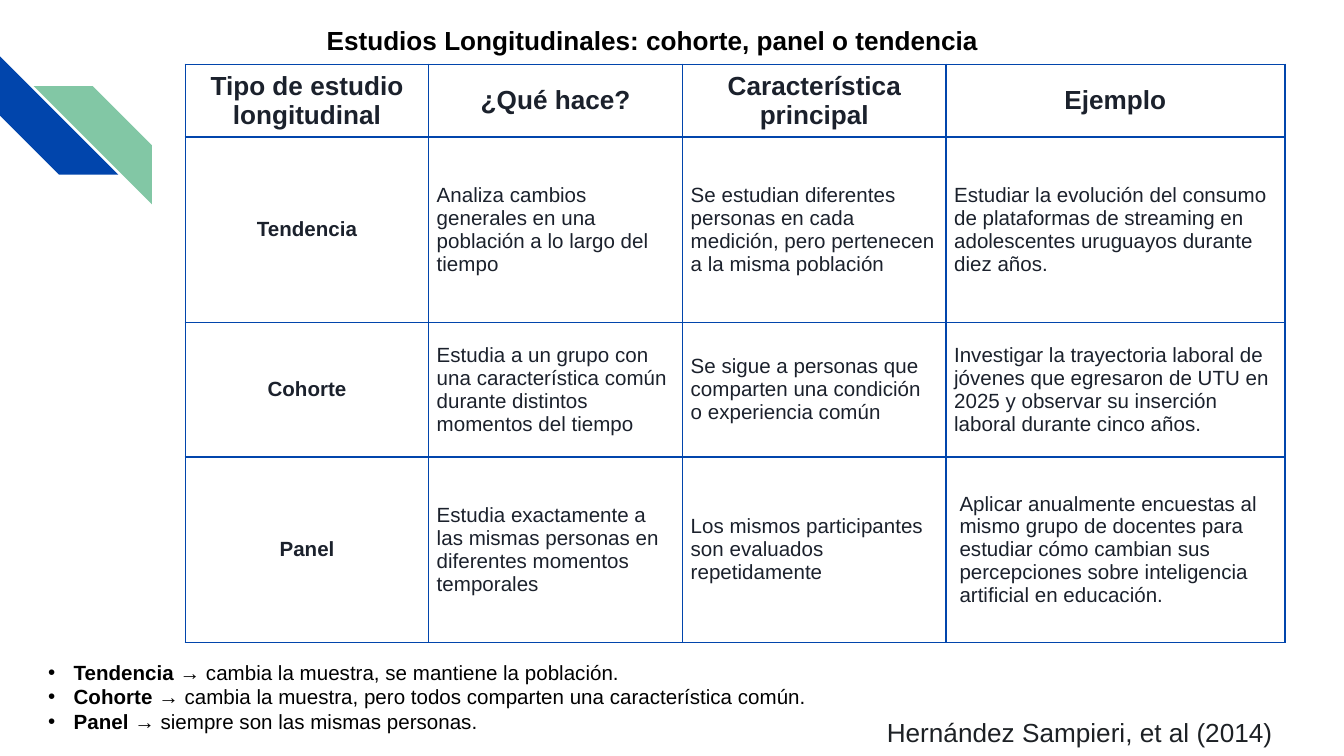
from lxml.etree import SubElement
from pptx import Presentation
from pptx.dml.color import RGBColor
from pptx.enum.shapes import MSO_SHAPE
from pptx.enum.text import MSO_ANCHOR, PP_ALIGN
from pptx.oxml.ns import qn
from pptx.util import Inches, Pt

BLUE, GREEN = "0145AC", "82C7A5"
BLACK, INK, GREY = "000000", "1B212C", "1D2125"

WIDTHS = [1.81, 1.89, 1.96, 2.52]
HEIGHTS = [0.54, 1.38, 1, 1.38]
ROWS = [
    ["Tipo de estudio longitudinal", "¿Qué hace?", "Característica principal", "Ejemplo"],
    ["Tendencia",
     "Analiza cambios generales en una población a lo largo del tiempo",
     "Se estudian diferentes personas en cada medición, pero pertenecen a la misma población",
     "Estudiar la evolución del consumo de plataformas de streaming en adolescentes "
     "uruguayos durante diez años."],
    ["Cohorte",
     "Estudia a un grupo con una característica común durante distintos momentos del tiempo",
     "Se sigue a personas que comparten una condición o experiencia común",
     "Investigar la trayectoria laboral de jóvenes que egresaron de UTU en 2025 y observar "
     "su inserción laboral durante cinco años."],
    ["Panel",
     "Estudia exactamente a las mismas personas en diferentes momentos temporales",
     "Los mismos participantes son evaluados repetidamente",
     "Aplicar anualmente encuestas al mismo grupo de docentes para estudiar cómo cambian "
     "sus percepciones sobre inteligencia artificial en educación."],
]
NOTES = [
    ("Tendencia", " → cambia la muestra, se mantiene la población."),
    ("Cohorte", " → cambia la muestra, pero todos comparten una característica común."),
    ("Panel", " → siempre son las mismas personas."),
]


def color(code):
    return RGBColor.from_string(code)


class Deck:
    """Holds the text style and the current slide."""

    def __init__(self, face="Arial"):
        self.face = face
        self.file = Presentation()
        self.file.slide_width = Inches(10)
        self.file.slide_height = Inches(10 * 9 / 16)
        self.slide = self.file.slides.add_slide(self.file.slide_layouts[5])

    def style(self, para, size, code, bold=None, align=PP_ALIGN.LEFT):
        para.alignment = align
        font = para.font
        font.name, font.size, font.bold = self.face, Pt(size), bold
        font.color.rgb = color(code)

    def title(self, text, *box):
        shape = self.slide.shapes.title
        shape.left, shape.top, shape.width, shape.height = map(Inches, box)
        frame = shape.text_frame
        frame.text = text
        frame.vertical_anchor = MSO_ANCHOR.TOP
        self.style(frame.paragraphs[0], 14, BLACK, True)

    def stripe(self, left, top, code, turn=0, flip=False):
        size = Inches(0.88)
        shape = self.slide.shapes.add_shape(
            MSO_SHAPE.DIAGONAL_STRIPE, Inches(left), Inches(top), size, size)
        shape.adjustments[0] = 0.5
        shape.rotation = turn
        shape.shadow.inherit = False
        shape.fill.solid()
        shape.fill.fore_color.rgb = color(code)
        shape.line.fill.background()
        if flip:
            shape.element.spPr.get_or_add_xfrm().set("flipH", "1")

    def text(self, *box):
        frame = self.slide.shapes.add_textbox(*map(Inches, box)).text_frame
        frame.word_wrap = True
        return frame

    def label(self, text, *box):
        para = self.text(*box).paragraphs[0]
        para.text = text
        self.style(para, 14, GREY)

    def list(self, items, *box):
        frame = self.text(*box)
        for i, (term, note) in enumerate(items):
            para = frame.add_paragraph() if i else frame.paragraphs[0]
            props = para._p.get_or_add_pPr()
            props.set("marL", str(Inches(0.19)))
            props.set("indent", str(-Inches(0.19)))
            SubElement(props, qn("a:buFont")).set("typeface", self.face)
            SubElement(props, qn("a:buChar")).set("char", "•")
            self.style(para, 11, BLACK)
            for words, bold in ((term, True), (note, False)):
                run = para.add_run()
                run.text = words
                run.font.bold = bold

    def border(self, cell):
        props = cell._tc.get_or_add_tcPr()
        for side in ("lnL", "lnR", "lnT", "lnB"):
            line = SubElement(props, qn("a:" + side), w=str(Pt(1)))
            fill = SubElement(line, qn("a:solidFill"))
            SubElement(fill, qn("a:srgbClr"), val=BLUE)

    def cell(self, cell, text, head, first, inset):
        cell.text = text
        cell.vertical_anchor = MSO_ANCHOR.MIDDLE
        cell.margin_left = cell.margin_right = Inches(inset)
        cell.margin_top = cell.margin_bottom = Inches(inset / 2)
        self.border(cell)
        cell.fill.background()
        bold = head or first
        align = PP_ALIGN.CENTER if bold else PP_ALIGN.LEFT
        self.style(cell.text_frame.paragraphs[0], 14 if head else 11, INK, bold, align)

    def table(self, rows, left, top):
        box = map(Inches, (left, top, sum(WIDTHS), sum(HEIGHTS)))
        table = self.slide.shapes.add_table(len(rows), len(WIDTHS), *box).table
        table.first_row = table.horz_banding = False
        for col, width in zip(table.columns, WIDTHS):
            col.width = Inches(width)
        last = len(rows) - 1, len(WIDTHS) - 1
        for r, row in enumerate(rows):
            table.rows[r].height = Inches(HEIGHTS[r])
            for c, text in enumerate(row):
                inset = 0.1 if (r, c) == last else 0.06
                self.cell(table.cell(r, c), text, r == 0, c == 0, inset)


def main():
    deck = Deck()
    deck.stripe(0, 0.42, BLUE, turn=270)
    deck.stripe(0.25, 0.64, GREEN, flip=True)
    deck.title("Estudios Longitudinales: cohorte, panel o tendencia", 2.33, 0.13, 6.06, 0.35)
    deck.table(ROWS, 1.38, 0.48)
    deck.label("Hernández Sampieri, et al (2014)", 6.5, 5.28, 3.4, 0.34)
    deck.list(NOTES, 0.26, 4.86, 6.67, 0.66)
    deck.file.save("out.pptx")


if __name__ == "__main__":
    main()
